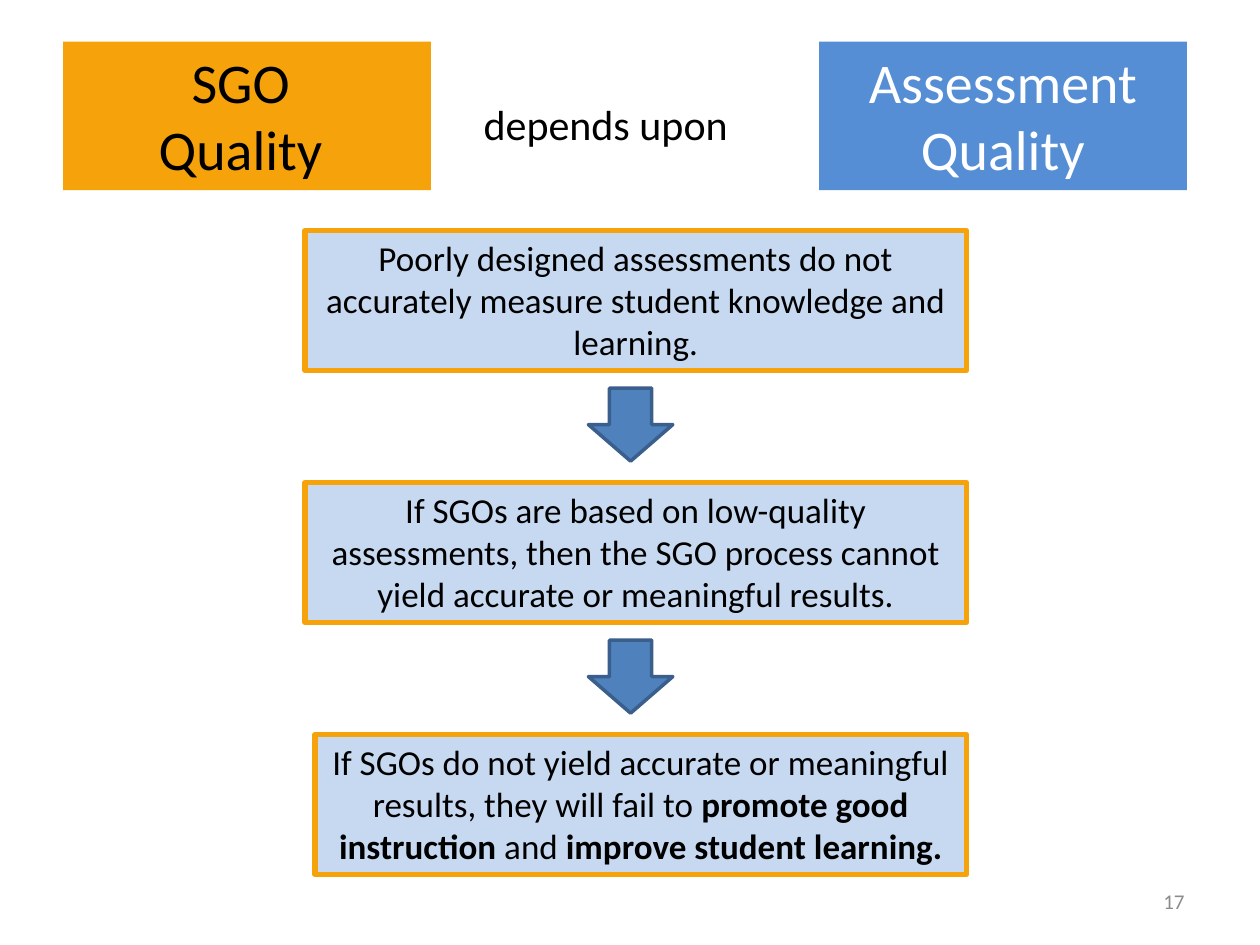
import pptx
import pptx.util
import pptx.dml.color
import pptx.enum.shapes
import pptx.enum.text

Inches, Pt = pptx.util.Inches, pptx.util.Pt
RGBColor = pptx.dml.color.RGBColor
SHAPE = pptx.enum.shapes.MSO_SHAPE
ALIGN = pptx.enum.text.PP_ALIGN
ANCHOR = pptx.enum.text.MSO_ANCHOR

ORANGE = RGBColor(0xF6, 0xA2, 0x0A)
BLUE = RGBColor(0x55, 0x8E, 0xD5)
PALE_BLUE = RGBColor(0xC6, 0xD9, 0xF1)
ARROW_BLUE = RGBColor(0x4F, 0x81, 0xBD)
ARROW_EDGE = RGBColor(0x3A, 0x5F, 0x8C)
GREY = RGBColor(0x8C, 0x8C, 0x8C)
BLACK = RGBColor(0, 0, 0)
WHITE = RGBColor(255, 255, 255)

# Content: each paragraph is a list of (text, bold) spans
HEADINGS = [  # left, fill, text colour, paragraphs
    (0.5, ORANGE, BLACK, [[("SGO ", False)], [("Quality ", False)]]),
    (6.5, BLUE, WHITE, [[("Assessment Quality", False)]]),
]
STEPS = [  # left, spans
    (2.42, [("Poorly designed assessments do not accurately measure "
             "student knowledge and learning.", False)]),
    (2.42, [("If SGOs are based on low-quality assessments, then the SGO "
             "process cannot yield accurate or meaningful results.", False)]),
    (2.5, [("If SGOs do not yield accurate or meaningful results, "
            "they will fail to ", False),
           ("promote good instruction", True),
           (" and ", False),
           ("improve student learning.", True)]),
]
STEP_TOP, STEP_PITCH, STEP_RIGHT, STEP_HEIGHT = 1.83, 2, 7.67, 1.11
ARROW_OFFSET = 1.25


def write(shape, paragraphs, size, color, align, anchor=ANCHOR.TOP, wrap=True):
    frame = shape.text_frame
    frame.word_wrap = wrap
    frame.vertical_anchor = anchor
    for index, spans in enumerate(paragraphs):
        para = frame.add_paragraph() if index else frame.paragraphs[0]
        para.alignment = align
        for text, bold in spans:
            span = para.add_run()
            span.text = text
            span.font.name = "Calibri"
            span.font.size = Pt(size)
            span.font.bold = bold
            span.font.color.rgb = color


def add_block(page, kind, place, fill, edge=None, edge_width=0):
    shape = page.shapes.add_shape(kind, *map(Inches, place))
    shape.shadow.inherit = False
    shape.fill.solid()
    shape.fill.fore_color.rgb = fill
    if edge is None:
        shape.line.fill.background()
    else:
        shape.line.color.rgb = edge
        shape.line.width = Pt(edge_width)
    return shape


def add_label(page, place, text, size, color, align, **layout):
    box = page.shapes.add_textbox(*map(Inches, place))
    write(box, [[(text, False)]], size, color, align, **layout)


def main():
    deck = pptx.Presentation()
    deck.slide_width, deck.slide_height = Inches(10), Inches(7.5)
    page = deck.slides.add_slide(deck.slide_layouts[6])

    # Chain of consequences, with an arrow after every step but the last
    for index, (left, spans) in enumerate(STEPS):
        top = STEP_TOP + index * STEP_PITCH
        step = add_block(page, SHAPE.RECTANGLE,
                         (left, top, STEP_RIGHT - left, STEP_HEIGHT),
                         PALE_BLUE, ORANGE, 3)
        write(step, [spans], 20, BLACK, ALIGN.CENTER)
        if index < len(STEPS) - 1:
            add_block(page, SHAPE.DOWN_ARROW,
                      (4.67, top + ARROW_OFFSET, 0.67, 0.58),
                      ARROW_BLUE, ARROW_EDGE, 2)

    # Headings and the words that join them
    for left, fill, color, paragraphs in HEADINGS:
        heading = add_block(page, SHAPE.RECTANGLE, (left, 0.33, 2.92, 1.18), fill)
        write(heading, paragraphs, 32, color, ALIGN.CENTER)
    add_label(page, (3.74, 0.73, 2.16, 0.5), "depends upon", 24, BLACK,
              ALIGN.LEFT, wrap=False)

    # Slide number
    add_label(page, (7.17, 6.95, 2.33, 0.4), "17", 12, GREY,
              ALIGN.RIGHT, anchor=ANCHOR.MIDDLE)

    deck.save("out.pptx")


if __name__ == "__main__":
    main()
